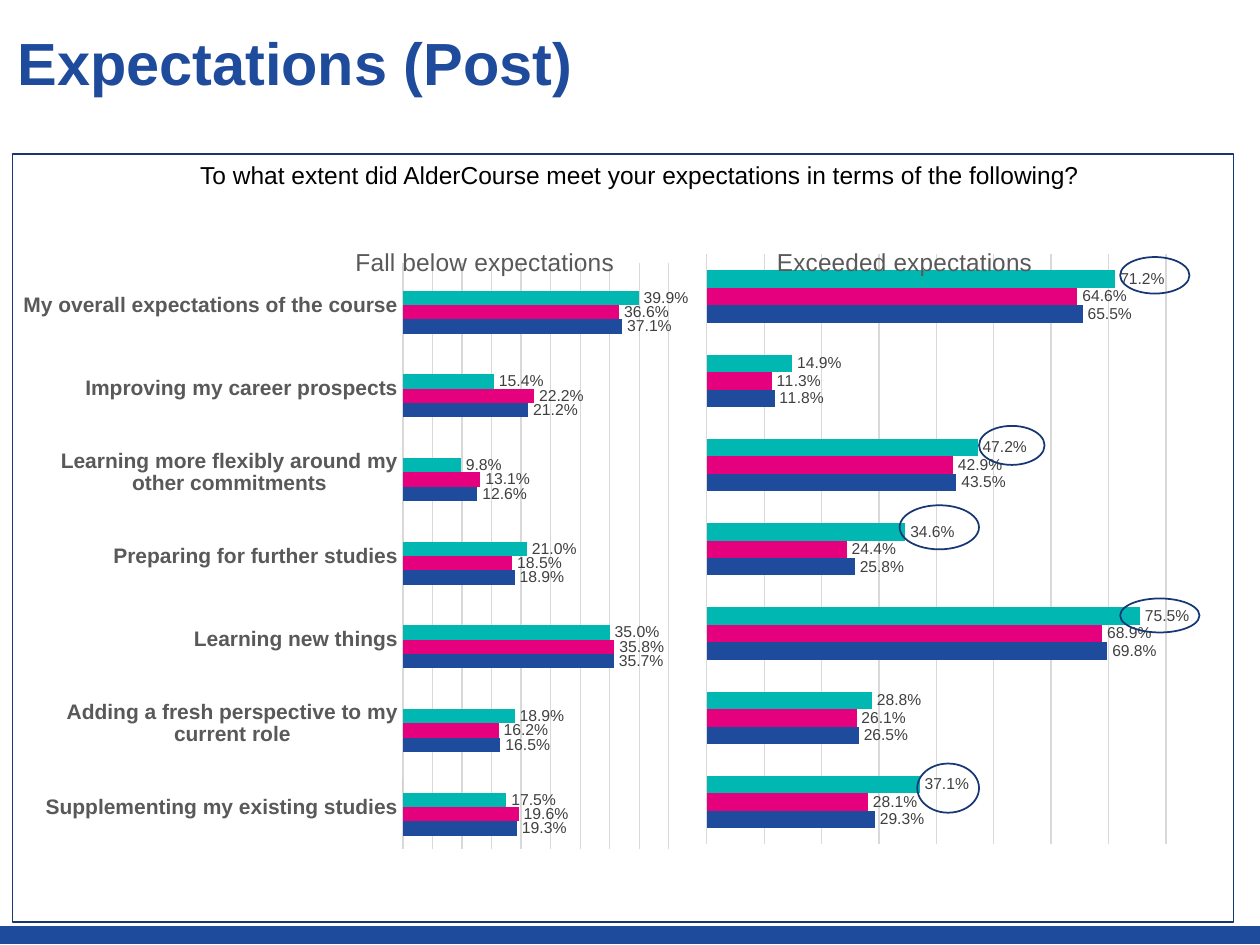
from dataclasses import dataclass

from lxml.etree import SubElement
from pptx import Presentation
from pptx.chart.data import CategoryChartData
from pptx.dml.color import RGBColor
from pptx.enum.chart import XL_CHART_TYPE, XL_LABEL_POSITION, XL_TICK_MARK
from pptx.enum.shapes import MSO_SHAPE
from pptx.enum.text import MSO_ANCHOR, MSO_AUTO_SIZE, PP_ALIGN
from pptx.oxml.ns import qn
from pptx.util import Inches, Pt


@dataclass(frozen=True)
class Theme:
    font: str = "Arial"
    blue: str = "1E4B9B"
    navy: str = "163773"
    pink: str = "E5007D"
    teal: str = "00B7B2"
    orange: str = "F26522"
    grid: str = "D9D9D9"
    axis_text: str = "595959"
    label_text: str = "404040"
    black: str = "000000"
    title_size: int = 34
    heading_size: int = 14
    category_size: int = 12
    chart_size: int = 10
    label_size: int = 9


THEME = Theme()
PERCENT = "###0.0%"
SERIES_COLORS = (THEME.blue, THEME.pink, THEME.teal, THEME.orange)

TOPICS = (
    "Supplementing my existing studies",
    "Adding a fresh perspective to my current role",
    "Learning new things",
    "Preparing for further studies",
    "Learning more flexibly around my other commitments",
    "Improving my career prospects",
    "My overall expectations of the course",
)
BELOW = (
    (0.193, 0.165, 0.357, 0.189, 0.126, 0.212, 0.371),
    (0.196, 0.162, 0.358, 0.185, 0.131, 0.222, 0.366),
    (0.175, 0.189, 0.35, 0.21, 0.098, 0.154, 0.399),
    (0,),
)
EXCEEDED = (
    (0.293, 0.265, 0.698, 0.258, 0.435, 0.118, 0.655),
    (0.281, 0.261, 0.689, 0.244, 0.429, 0.113, 0.646),
    (0.371, 0.288, 0.755, 0.346, 0.472, 0.149, 0.712),
)
HIGHLIGHTS = (
    (8.89, 2.04, 0.55, 0.29),
    (7.77, 3.38, 0.52, 0.31),
    (7.14, 4.01, 0.63, 0.35),
    (8.89, 4.75, 0.63, 0.27),
    (7.28, 6.06, 0.49, 0.39),
)


def inches(box):
    return [Inches(length) for length in box]


def style_font(font, size, color, bold=False):
    font.name = THEME.font
    font.size = Pt(size)
    font.bold = bold
    font.color.rgb = RGBColor.from_string(color)


def style_line(line, color, width):
    line.color.rgb = RGBColor.from_string(color)
    line.width = Pt(width)


def add_title(slide, box):
    title = slide.shapes.title
    title.left, title.top, title.width, title.height = inches(box)
    frame = title.text_frame
    frame.auto_size = MSO_AUTO_SIZE.NONE
    frame.vertical_anchor = MSO_ANCHOR.MIDDLE
    frame.margin_left = frame.margin_top = frame.margin_bottom = Inches(0.04)
    frame.margin_right = Inches(0.02)
    paragraph = frame.paragraphs[0]
    paragraph.alignment = PP_ALIGN.LEFT
    paragraph.line_spacing = 0.85
    run = paragraph.add_run()
    run.text = "Expectations (Post)"
    style_font(run.font, THEME.title_size, THEME.blue, True)


def add_question(slide, box):
    question = slide.shapes.add_textbox(*inches(box))
    question.text_frame.word_wrap = True
    paragraph = question.text_frame.paragraphs[0]
    paragraph.level = 1
    properties = paragraph._p.get_or_add_pPr()
    properties.set("marL", str(Inches(0.5)))
    properties.set("indent", "0")
    run = paragraph.add_run()
    run.text = "To what extent did AlderCourse meet your expectations in terms of the following?"
    style_font(run.font, THEME.heading_size, THEME.black)


def add_outline(slide, kind, box, color, filled=False):
    outline = slide.shapes.add_shape(kind, *inches(box))
    outline.shadow.inherit = False
    if filled:
        outline.fill.solid()
        outline.fill.fore_color.rgb = RGBColor.from_string(color)
    else:
        outline.fill.background()
    style_line(outline.line, color, 1)


def set_layout(parent, position, **settings):
    for old in parent.findall(qn("c:layout")):
        parent.remove(old)
    layout = SubElement(parent, qn("c:layout"))
    parent.insert(position, layout)
    manual = SubElement(layout, qn("c:manualLayout"))
    for name, value in settings.items():
        SubElement(manual, qn(f"c:{name}")).set("val", str(value))


def add_bar_chart(slide, box, heading, heading_at, categories, rows, plot, maximum, step):
    data = CategoryChartData(number_format=PERCENT)
    data.categories = categories
    for number, values in enumerate(rows, 1):
        data.add_series(f"Series {number}", values)
    chart = slide.shapes.add_chart(XL_CHART_TYPE.BAR_CLUSTERED, *inches(box), data).chart
    chart.has_legend = False
    style_font(chart.font, THEME.chart_size, THEME.black)

    run = chart.chart_title.text_frame.paragraphs[0].add_run()
    run.text = heading
    style_font(run.font, THEME.heading_size, THEME.axis_text)
    chart.chart_title.include_in_layout = False
    left, top = heading_at
    set_layout(chart.element.xpath("c:chart/c:title")[0], 1,
               xMode="edge", yMode="edge", x=left, y=top)
    left, top, width, height = plot
    set_layout(chart.element.xpath("c:chart/c:plotArea")[0], 0, layoutTarget="inner",
               xMode="edge", yMode="edge", x=left, y=top, w=width, h=height)

    scale = chart.value_axis
    scale.minimum_scale, scale.maximum_scale, scale.major_unit = 0, maximum, step
    scale.has_major_gridlines = True
    style_line(scale.major_gridlines.format.line, THEME.grid, 0.75)
    scale.tick_labels.number_format = PERCENT
    scale.tick_labels.number_format_is_linked = False
    scale.visible = False

    bars = chart.plots[0]
    bars.gap_width = 182
    bars.vary_by_categories = False
    for series, color in zip(bars.series, SERIES_COLORS):
        series.invert_if_negative = False
        series.format.fill.solid()
        series.format.fill.fore_color.rgb = RGBColor.from_string(color)
        if any(series.values):
            labels = series.data_labels
            labels.show_value = True
            labels.position = XL_LABEL_POSITION.OUTSIDE_END
            labels.number_format = PERCENT
            labels.number_format_is_linked = False
            style_font(labels.font, THEME.label_size, THEME.label_text)
    return chart


def add_below_chart(slide, box):
    chart = add_bar_chart(slide, box, "Fall below expectations", (0.5, 0.08), TOPICS, BELOW,
                          (0.577, 0.112, 0.393, 0.869), 0.45, 0.05)
    axis = chart.category_axis
    axis.major_tick_mark = axis.minor_tick_mark = XL_TICK_MARK.NONE
    style_font(axis.tick_labels.font, THEME.category_size, THEME.axis_text, True)
    style_line(axis.format.line, THEME.grid, 0.75)


def add_exceeded_chart(slide, box):
    chart = add_bar_chart(slide, box, "Exceeded expectations", (0.17, 0.08),
                          [str(number) for number in range(1, 8)], EXCEEDED,
                          (0.038, 0.099, 0.923, 0.875), 0.8, 0.1)
    chart.category_axis.visible = False


def main():
    deck = Presentation()
    deck.slide_width, deck.slide_height = Inches(10), Inches(7.5)
    slide = deck.slides.add_slide(deck.slide_layouts[5])
    add_outline(slide, MSO_SHAPE.RECTANGLE, (0, 7.36, 10, 0.13), THEME.blue, filled=True)
    add_title(slide, (0.1, 0.27, 8.08, 0.53))
    add_below_chart(slide, (0.1, 1.49, 5.37, 5.35))
    add_exceeded_chart(slide, (5.46, 1.49, 3.98, 5.35))
    add_question(slide, (0.99, 1.22, 7.9, 0.34))
    for highlight in HIGHLIGHTS:
        add_outline(slide, MSO_SHAPE.OVAL, highlight, THEME.navy)
    add_outline(slide, MSO_SHAPE.RECTANGLE, (0.1, 1.22, 9.69, 6.1), THEME.navy)
    deck.save("out.pptx")


if __name__ == "__main__":
    main()
